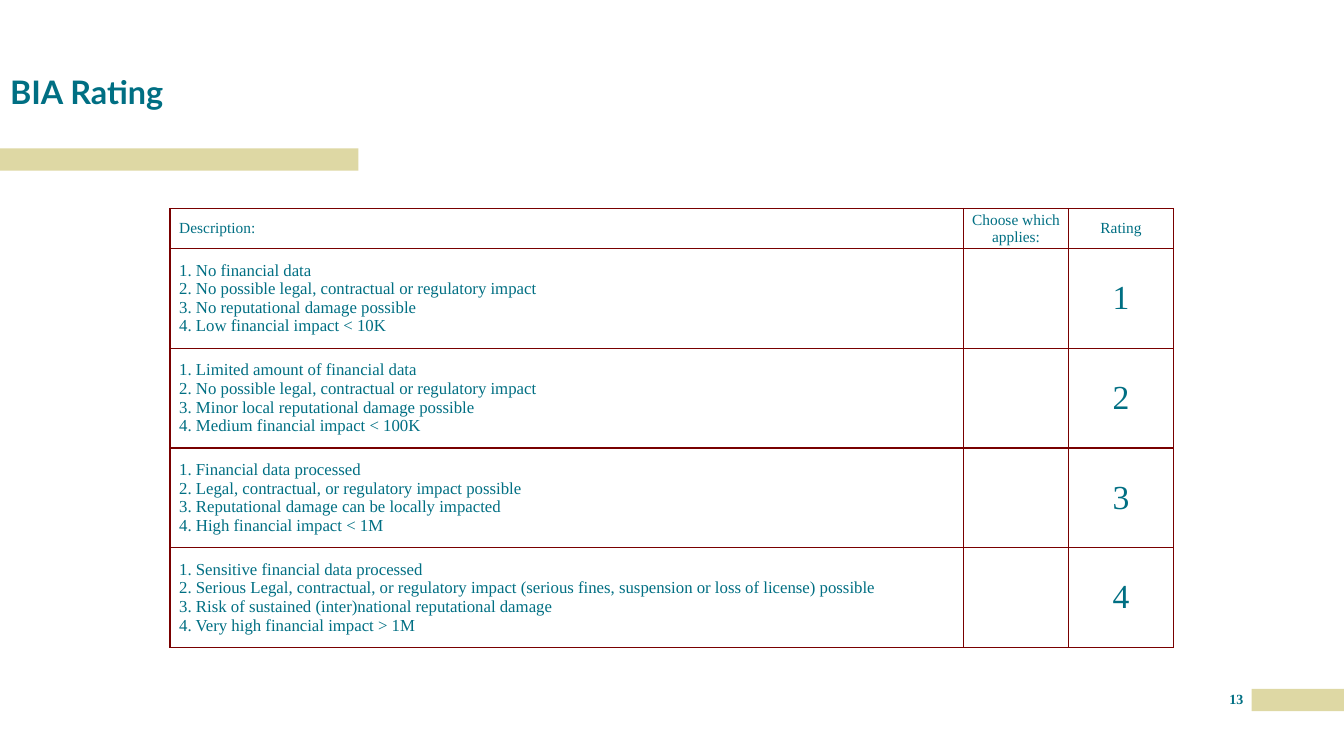
import pptx
import pptx.dml.color
import pptx.enum.shapes
import pptx.enum.text
import pptx.oxml
import pptx.oxml.ns
import pptx.util
from dataclasses import dataclass

Pt = pptx.util.Pt
Align = pptx.enum.text.PP_ALIGN
Anchor = pptx.enum.text.MSO_ANCHOR


@dataclass
class Theme:
    teal = pptx.dml.color.RGBColor.from_string("006F83")
    sand = pptx.dml.color.RGBColor.from_string("DED8A4")
    border = "790000"
    heading_font = "Lato"
    body_font = "Times New Roman"
    title_size = 23.1
    header_size = 11
    list_size = 12
    rating_size = 24
    number_size = 10


theme = Theme()


def style(paragraph, size, align, name=theme.body_font, bold=False):
    paragraph.alignment = align
    paragraph.font.size = Pt(size)
    paragraph.font.name = name
    paragraph.font.bold = bold
    paragraph.font.color.rgb = theme.teal


def fill_cell(cell, text, size, align, inset):
    cell.fill.background()
    cell.vertical_anchor = Anchor.MIDDLE
    cell.margin_left = Pt(inset)
    cell.margin_right = cell.margin_top = cell.margin_bottom = 0
    cell.text_frame.text = text
    style(cell.text_frame.paragraphs[0], size, align)
    properties = cell._tc.get_or_add_tcPr()
    for position, side in enumerate(("lnL", "lnR", "lnT", "lnB")):
        properties.insert(position, pptx.oxml.parse_xml(
            f'<a:{side} {pptx.oxml.ns.nsdecls("a")} w="12700"><a:solidFill>'
            f'<a:srgbClr val="{theme.border}"/></a:solidFill></a:{side}>'))


deck = pptx.Presentation()
deck.slide_width, deck.slide_height = Pt(960), Pt(540)
page = deck.slides.add_slide(deck.slide_layouts[5])

for left, top, width in ((894, 492, 66), (0, 106, 256)):
    bar = page.shapes.add_shape(
        pptx.enum.shapes.MSO_SHAPE.RECTANGLE, Pt(left), Pt(top), Pt(width), Pt(16))
    bar.shadow.inherit = False
    bar.fill.solid()
    bar.fill.fore_color.rgb = theme.sand
    bar.line.fill.background()

title = page.shapes.title
title.left, title.top, title.width, title.height = 0, Pt(55.5), Pt(960), Pt(47.5)
title.text_frame.text = "BIA Rating"
title.text_frame.vertical_anchor = Anchor.TOP
title.text_frame.auto_size = pptx.enum.text.MSO_AUTO_SIZE.NONE
title_line = title.text_frame.paragraphs[0]
title_line.line_spacing = 0.7
style(title_line, theme.title_size, Align.LEFT, theme.heading_font, True)

number_box = page.shapes.add_textbox(Pt(872.6), Pt(493), Pt(21), Pt(18))
number_frame = number_box.text_frame
number_frame.word_wrap = True
number_frame.margin_left = number_frame.margin_right = 0
number_frame.margin_top = number_frame.margin_bottom = 0
number_frame.text = "13"
style(number_frame.paragraphs[0], theme.number_size, Align.CENTER, bold=True)

headers = ("Description:", "Choose which applies:", "Rating")
descriptions = (
    ("No financial data",
     "No possible legal, contractual or regulatory impact",
     "No reputational damage possible",
     "Low financial impact < 10K"),
    ("Limited amount of financial data",
     "No possible legal, contractual or regulatory impact",
     "Minor local reputational damage possible",
     "Medium financial impact < 100K"),
    ("Financial data processed",
     "Legal, contractual, or regulatory impact possible",
     "Reputational damage can be locally impacted",
     "High financial impact < 1M"),
    ("Sensitive financial data processed",
     "Serious Legal, contractual, or regulatory impact "
     "(serious fines, suspension or loss of license) possible",
     "Risk of sustained (inter)national reputational damage",
     "Very high financial impact > 1M"),
)

header_height, row_height = 28.5, 71.25
column_widths = (566.8, 75, 75)
table_height = header_height + row_height * len(descriptions)
table = page.shapes.add_table(
    len(descriptions) + 1, len(headers),
    Pt(121.5), Pt(149), Pt(sum(column_widths)), Pt(table_height)).table
table.first_row = table.horz_banding = False
for column, width in zip(table.columns, column_widths):
    column.width = Pt(width)

aligns = (Align.LEFT, Align.CENTER, Align.CENTER)
insets = (6.5, 0, 0)
body_sizes = (theme.list_size, theme.list_size, theme.rating_size)
rows = [headers]
for rating, lines in enumerate(descriptions, 1):
    numbered = "\v".join(f"{item}. {line}" for item, line in enumerate(lines, 1))
    rows.append((numbered, "", str(rating)))

for index, texts in enumerate(rows):
    table.rows[index].height = Pt(row_height if index else header_height)
    sizes = body_sizes if index else [theme.header_size] * len(headers)
    for cell, text, size, align, inset in zip(
            table.rows[index].cells, texts, sizes, aligns, insets):
        fill_cell(cell, text, size, align, inset)

deck.save("out.pptx")
